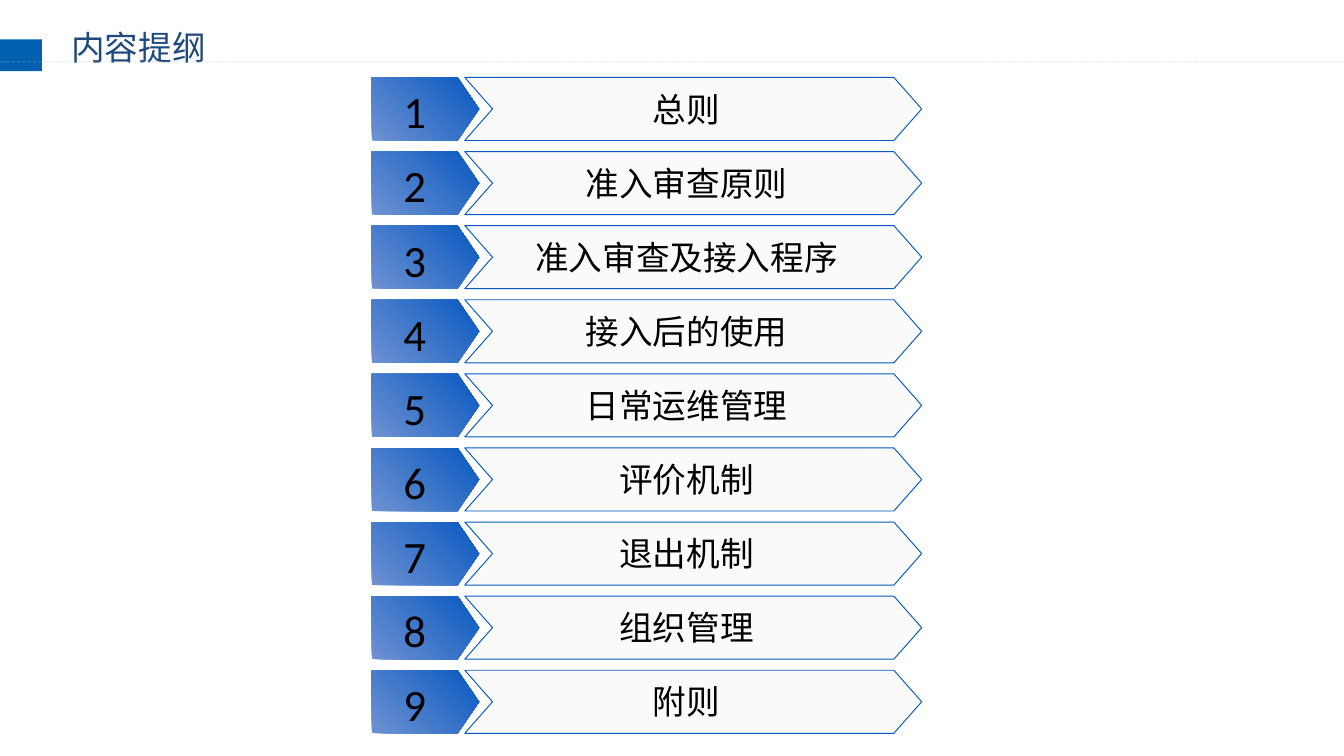
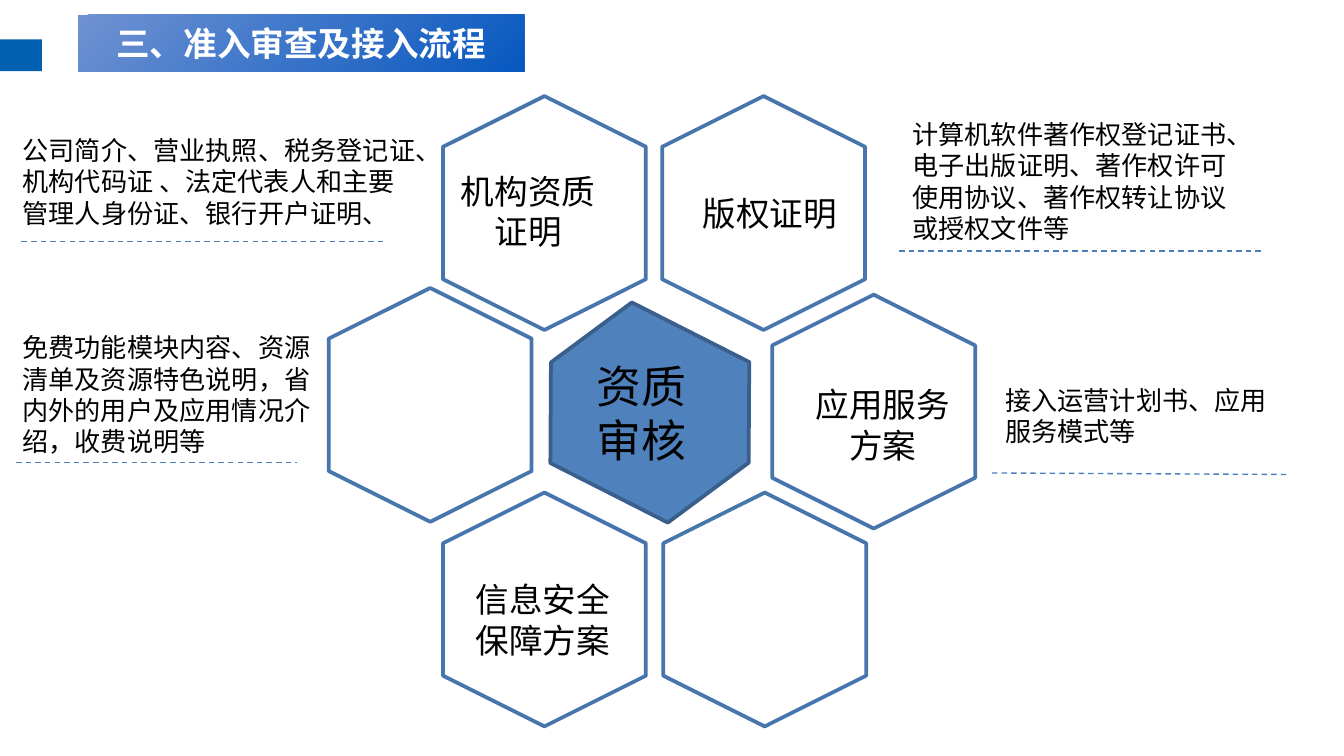
from lxml import etree
from pptx import Presentation
from pptx.dml.color import RGBColor
from pptx.enum.dml import MSO_LINE
from pptx.enum.shapes import MSO_CONNECTOR, MSO_SHAPE
from pptx.enum.text import MSO_ANCHOR, MSO_AUTO_SIZE, PP_ALIGN
from pptx.oxml.ns import qn
from pptx.util import Pt

RECTANGLE, HEXAGON = MSO_SHAPE.RECTANGLE, MSO_SHAPE.HEXAGON
CHEVRON, PENTAGON = MSO_SHAPE.CHEVRON, MSO_SHAPE.FLOWCHART_OFFPAGE_CONNECTOR
STRAIGHT = MSO_CONNECTOR.STRAIGHT
DASH, SHORT_DASH = MSO_LINE.DASH, MSO_LINE.SQUARE_DOT
TOP, MIDDLE = MSO_ANCHOR.TOP, MSO_ANCHOR.MIDDLE
LEFT, CENTER = PP_ALIGN.LEFT, PP_ALIGN.CENTER
GROW, FIXED = MSO_AUTO_SIZE.SHAPE_TO_FIT_TEXT, MSO_AUTO_SIZE.NONE

CHINESE, DIGITS = "Noto Sans CJK SC", "Calibri"
BLACK = RGBColor(0x00, 0x00, 0x00)
WHITE = RGBColor(0xFF, 0xFF, 0xFF)
NAVY = RGBColor(0x1F, 0x49, 0x7D)
TAB_BLUE = RGBColor(0x01, 0x60, 0xAF)
LIGHT_BLUE = RGBColor(0x6F, 0x92, 0xD2)
DEEP_BLUE = RGBColor(0x07, 0x58, 0xC0)
HEX_BLUE = RGBColor(0x4F, 0x81, 0xBD)
HEX_EDGE = RGBColor(0x48, 0x75, 0xAC)
HEX_DARK = RGBColor(0x3A, 0x5F, 0x8C)
DASH_BLUE = RGBColor(0x4B, 0x7E, 0xBC)
PALE_GRAY = RGBColor(0xF2, 0xF2, 0xF2)
RULE_GRAY = RGBColor(0xC0, 0xC0, 0xC0)


def points(*lengths):
    return [Pt(length) for length in lengths]


def set_opacity(shape, percent):
    """Apply opacity to the first colour of a shape or line."""
    color = shape._element.spPr.find(".//" + qn("a:srgbClr"))
    etree.SubElement(color, qn("a:alpha"), val=str(percent * 1000))


def fill_gradient(shape):
    shape.fill.gradient()
    shape.fill.gradient_angle = 315
    for stop, color in zip(shape.fill.gradient_stops, (LIGHT_BLUE, DEEP_BLUE)):
        stop.color.rgb = color


class Deck:
    def __init__(self):
        self.deck = Presentation()
        self.deck.slide_width, self.deck.slide_height = points(720, 405)
        self.slide = None
        self.shapes = None

    def new_slide(self):
        self.slide = self.deck.slides.add_slide(self.deck.slide_layouts[5])
        self.leave_group()
        self.shape(RECTANGLE, (0, 21.1, 22.5, 17), TAB_BLUE)

    def enter_group(self):
        self.shapes = self.slide.shapes.add_group_shape().shapes

    def leave_group(self):
        self.shapes = self.slide.shapes

    def set_text(self, box, text, size=18, color=BLACK, align=LEFT,
                 font=CHINESE, bold=False, anchor=TOP, fit=GROW):
        frame = box.text_frame
        frame.text = text
        frame.word_wrap = True
        frame.auto_size = fit
        frame.vertical_anchor = anchor
        para = frame.paragraphs[0]
        para.alignment = align
        para.font.size = Pt(size)
        para.font.bold = bold
        para.font.color.rgb = color
        para.font.name = font
        etree.SubElement(para.font._element, qn("a:ea"), typeface=font)

    def title(self, text, place, **style):
        box = self.slide.shapes.title
        box.left, box.top, box.width, box.height = points(*place)
        self.set_text(box, text, fit=FIXED, **style)
        return box

    def text(self, text, place, **style):
        self.set_text(self.shapes.add_textbox(*points(*place)), text, **style)

    def shape(self, kind, place, fill=None, edge=None, weight=2, rotation=0):
        shape = self.shapes.add_shape(kind, *points(*place))
        shape.shadow.inherit = False
        shape.rotation = rotation
        if fill is None:
            fill_gradient(shape)
        else:
            shape.fill.solid()
            shape.fill.fore_color.rgb = fill
        if edge is None:
            shape.line.fill.background()
        else:
            shape.line.color.rgb = edge
            shape.line.width = Pt(weight)
        return shape

    def line(self, start, end, color, dash):
        line = self.shapes.add_connector(STRAIGHT, *points(*start, *end))
        line.line.color.rgb = color
        line.line.width = Pt(0.75)
        line.line.dash_style = dash
        etree.SubElement(line._element.spPr, qn("a:effectLst"))
        return line

    def agenda_row(self, number, label, top):
        self.enter_group()
        self.shape(PENTAGON, (211, top - 11.9, 33.8, 57.6), rotation=270)
        arrow = self.shape(CHEVRON, (249, top, 244.8, 33.8), PALE_GRAY, DEEP_BLUE, 0.5)
        arrow.adjustments[0] = 0.441
        set_opacity(arrow, 33)
        self.text(str(number), (209, top, 17.3, 36), size=24, font=DIGITS)
        self.text(label, (239.6, top + 2.4, 256.3, 28.8), align=CENTER)
        self.leave_group()


def agenda_slide(deck):
    deck.new_slide()
    deck.title("内容提纲", (31, 10.8, 121, 28.8), color=NAVY)
    set_opacity(deck.line((0, 33.1), (720, 33.1), RULE_GRAY, SHORT_DASH), 22)
    labels = ["总则", "准入审查原则", "准入审查及接入程序", "接入后的使用", "日常运维管理",
              "评价机制", "退出机制", "组织管理", "附则"]
    for index, label in enumerate(labels):
        deck.agenda_row(index + 1, label, 41.5 + 39.7 * index)


def review_slide(deck):
    deck.new_slide()
    banner = deck.title("三、准入审查及接入流程", (41.8, 7.9, 239, 30.6),
                        color=WHITE, align=CENTER, bold=True, anchor=MIDDLE)
    fill_gradient(banner)

    # Ring of hexagons
    deck.enter_group()
    for left, top in [(346.4, 59.8), (229, 59.8), (167.8, 162.6),
                      (405.4, 166.2), (347, 272.2), (229, 272.2)]:
        deck.shape(HEXAGON, (left, top, 125.3, 108.7), WHITE, HEX_EDGE, rotation=90)
    deck.leave_group()
    for label, left, top, height, align in [
            ("机构资质证明", 237.6, 87.8, 51, CENTER),
            ("版权证明", 369.4, 100, 28.8, LEFT),
            ("应用服务方案", 427.7, 202.3, 51, CENTER),
            ("信息安全保障方案", 245.5, 306.7, 51, CENTER)]:
        deck.text(label, (left, top, 90.7, height), align=align)

    # Centre
    deck.shape(HEXAGON, (288.7, 172.8, 118.8, 96.5), HEX_BLUE, HEX_DARK, rotation=26.9)
    deck.text("资质审核", (312.5, 188.6, 67.7, 65.5), size=24)

    # Notes with dashed underlines
    notes = [
        ("公司简介、营业执照、税务登记证、机构代码证 、法定代表人和主要管理人身份证、银行开户证明、",
         (5, 68.4, 226.8, 58.3), (11.5, 129.4), (206, 129.4)),
        ("计算机软件著作权登记证书、电子出版证明、著作权许可使用协议、著作权转让协议或授权文件等",
         (481.7, 59.8, 195.8, 74.9), (481.7, 134.5), (677.5, 134.5)),
        ("免费功能模块内容、资源清单及资源特色说明，省内外的用户及应用情况介绍，收费说明等",
         (5, 174.2, 169.9, 74.9), (8.6, 247.7), (159.1, 247.7)),
        ("接入运营计划书、应用服务模式等",
         (531.4, 202.3, 163.4, 41), (531.4, 253.4), (689, 254.2)),
    ]
    for note, place, start, end in notes:
        deck.text(note, place, size=14)
        deck.line(start, end, DASH_BLUE, DASH)


def main():
    deck = Deck()
    agenda_slide(deck)
    review_slide(deck)
    deck.deck.save("out.pptx")


if __name__ == "__main__":
    main()
